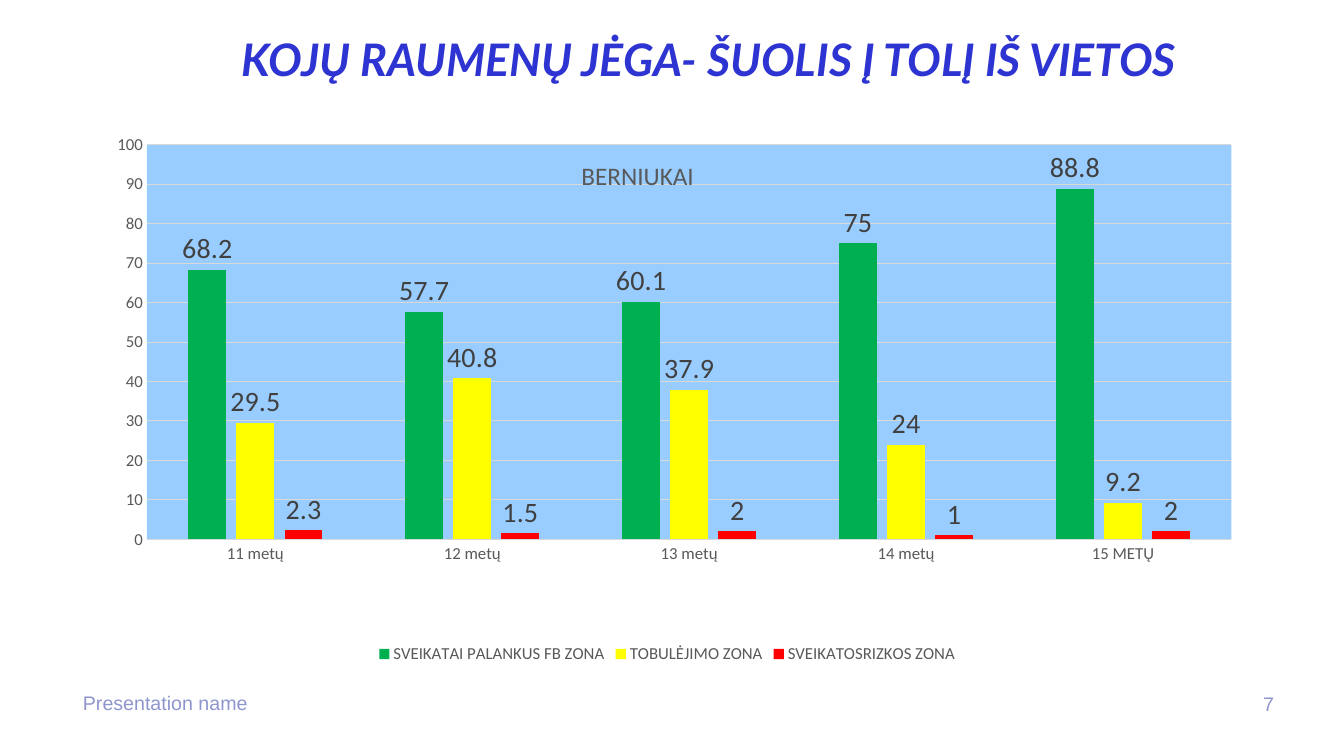
import pptx
import pptx.chart.data
import pptx.dml.color
import pptx.enum.chart
import pptx.enum.text
import pptx.oxml
import pptx.oxml.ns
import pptx.util

PX = 914400 / 100.8
SLIDE = (1344, 756)
TITLE = ("KOJŲ RAUMENŲ JĖGA- ŠUOLIS Į TOLĮ IŠ VIETOS", (73, 33, 1272, 81))
FOOTERS = [
    ("Presentation name", (73, 684, 635, 38), pptx.enum.text.PP_ALIGN.LEFT),
    ("7", (1232, 684, 52, 40), pptx.enum.text.PP_ALIGN.RIGHT),
]
CHART_TITLE = "BERNIUKAI"
CHART_AREA = (103, 70, 1129, 598)
AGES = ["11 metų", "12 metų", "13 metų", "14 metų", "15 METŲ"]
ZONES = [
    ("SVEIKATAI PALANKUS FB ZONA", "00B050", (68.2, 57.7, 60.1, 75, 88.8)),
    ("TOBULĖJIMO ZONA", "FFFF00", (29.5, 40.8, 37.9, 24, 9.2)),
    ("SVEIKATOSRIZKOS ZONA", "FF0000", (2.3, 1.5, 2, 1, 2)),
]
PLOT_LAYOUT = {"layoutTarget": "inner", "xMode": "edge", "yMode": "edge",
               "x": 0.039, "y": 0.125, "w": 0.961, "h": 0.66}
TITLE_LAYOUT = {"xMode": "edge", "yMode": "edge", "x": 0.42, "y": 0.14}
PLOT_FILL, GRID, GREY, DARK = "99CCFF", "D9D9D9", "595959", "404040"


def px(values):
    return [pptx.util.Emu(round(value * PX)) for value in values]


def color(value):
    return pptx.dml.color.RGBColor.from_string(value)


def style(font, name, size, fill, bold=False, italic=False):
    font.name, font.size = name, pptx.util.Pt(size)
    font.bold, font.italic = bold, italic
    font.color.rgb = color(fill)


def draw_line(line):
    line.color.rgb = color(GRID)
    line.width = pptx.util.Pt(0.75)


def set_layout(parent, index, settings):
    for layout in parent.findall(pptx.oxml.ns.qn("c:layout")):
        parent.remove(layout)
    items = "".join(f'<c:{key} val="{value}"/>' for key, value in settings.items())
    parent.insert(index, pptx.oxml.parse_xml(
        f'<c:layout {pptx.oxml.ns.nsdecls("c")}>'
        f"<c:manualLayout>{items}</c:manualLayout></c:layout>"))


def add_title(page):
    text, area = TITLE
    box = page.shapes.title
    box.left, box.top, box.width, box.height = px(area)
    frame = box.text_frame
    frame.text = text
    frame.word_wrap = True
    frame.vertical_anchor = pptx.enum.text.MSO_ANCHOR.TOP
    para = frame.paragraphs[0]
    para.alignment = pptx.enum.text.PP_ALIGN.CENTER
    para.line_spacing = 0.9
    style(para.font, "Lato", 32, "2E34D1", True, True)


def add_footer(page, text, area, alignment):
    frame = page.shapes.add_textbox(*px(area)).text_frame
    frame.word_wrap = True
    frame.vertical_anchor = pptx.enum.text.MSO_ANCHOR.MIDDLE
    frame.text = text
    para = frame.paragraphs[0]
    para.alignment = alignment
    style(para.font, "Arial", 14, "8E96CD")


def add_zone_chart(page):
    data = pptx.chart.data.CategoryChartData()
    data.categories = AGES
    for name, fill, values in ZONES:
        data.add_series(name, values)
    chart = page.shapes.add_chart(
        pptx.enum.chart.XL_CHART_TYPE.COLUMN_CLUSTERED, *px(CHART_AREA), data).chart
    style(chart.font, "Calibri", 10, "000000")

    chart.has_title = True
    frame = chart.chart_title.text_frame
    frame.text = CHART_TITLE
    style(frame.paragraphs[0].font, "Calibri", 18, GREY)
    heading = chart.chart_title.element
    set_layout(heading, 1, TITLE_LAYOUT)
    heading.find(pptx.oxml.ns.qn("c:overlay")).set("val", "1")

    chart.has_legend = True
    chart.legend.position = pptx.enum.chart.XL_LEGEND_POSITION.BOTTOM
    chart.legend.include_in_layout = False
    style(chart.legend.font, "Calibri", 12, GREY)

    for axis in (chart.category_axis, chart.value_axis):
        axis.major_tick_mark = pptx.enum.chart.XL_TICK_MARK.NONE
        axis.minor_tick_mark = pptx.enum.chart.XL_TICK_MARK.NONE
        style(axis.tick_labels.font, "Calibri", 12, GREY)
    draw_line(chart.category_axis.format.line)
    scale = chart.value_axis
    scale.minimum_scale, scale.maximum_scale, scale.major_unit = 0, 100, 10
    scale.format.line.fill.background()
    draw_line(scale.major_gridlines.format.line)

    plot = chart.plots[0]
    plot.gap_width, plot.overlap, plot.vary_by_categories = 219, -27, False
    for series, (name, fill, values) in zip(plot.series, ZONES):
        series.format.fill.solid()
        series.format.fill.fore_color.rgb = color(fill)
        labels = series.data_labels
        labels.show_value = True
        labels.position = pptx.enum.chart.XL_LABEL_POSITION.OUTSIDE_END
        style(labels.font, "Calibri", 20, DARK)

    plot_area = chart.element.find(".//" + pptx.oxml.ns.qn("c:plotArea"))
    set_layout(plot_area, 0, PLOT_LAYOUT)
    plot_area.append(pptx.oxml.parse_xml(
        f'<c:spPr {pptx.oxml.ns.nsdecls("c", "a")}><a:solidFill>'
        f'<a:srgbClr val="{PLOT_FILL}"/></a:solidFill></c:spPr>'))


def main():
    deck = pptx.Presentation()
    deck.slide_width, deck.slide_height = px(SLIDE)
    page = deck.slides.add_slide(deck.slide_layouts[5])
    add_title(page)
    for text, area, alignment in FOOTERS:
        add_footer(page, text, area, alignment)
    add_zone_chart(page)
    deck.save("out.pptx")


if __name__ == "__main__":
    main()
